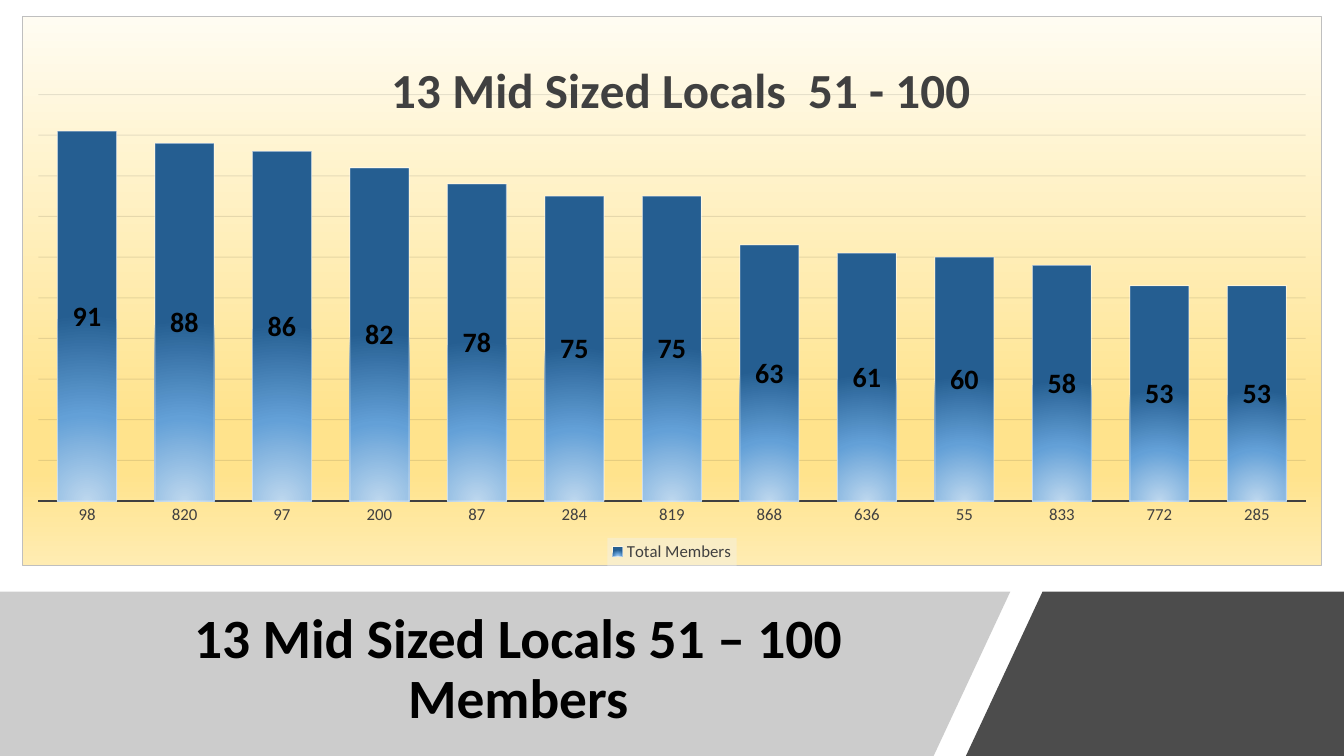
from pptx import Presentation
from pptx.chart.data import CategoryChartData
from pptx.dml.color import RGBColor
from pptx.enum.chart import XL_CHART_TYPE as ChartType, XL_LABEL_POSITION as LabelPosition
from pptx.enum.chart import XL_LEGEND_POSITION as LegendPosition, XL_TICK_MARK as TickMark
from pptx.enum.text import MSO_ANCHOR, PP_ALIGN
from pptx.oxml import parse_xml
from pptx.oxml.ns import nsdecls, qn
from pptx.util import Inches, Pt

TITLE = "13 Mid Sized Locals 51 – 100 Members"
CHART_TITLE = "13 Mid Sized Locals  51 - 100"
SERIES_NAME = "Total Members"
MEMBERS_BY_LOCAL = [
    ("98", 91), ("820", 88), ("97", 86), ("200", 82), ("87", 78), ("284", 75), ("819", 75),
    ("868", 63), ("636", 61), ("55", 60), ("833", 58), ("772", 53), ("285", 53),
]

WIDTH, HEIGHT = 13.33, 7.5
BAND_TOP = 5.87
BAND_PANELS = [
    ([(0, BAND_TOP), (10.02, BAND_TOP), (9.26, HEIGHT), (0, HEIGHT)], RGBColor(0x80, 0x80, 0x80), 40),
    ([(10.34, BAND_TOP), (WIDTH, BAND_TOP), (WIDTH, HEIGHT), (9.58, HEIGHT)], RGBColor(0, 0, 0), 70),
]
TITLE_BOX = (0.92, 6.05, 8.44, 1.2)
CHART_BOX = (0.22, 0.16, 12.89, 5.46)

FONT = "Calibri"
BLACK = RGBColor(0, 0, 0)
WHITE = RGBColor(0xFF, 0xFF, 0xFF)
DARK_GREY = RGBColor(0x40, 0x40, 0x40)
GRID_GREY = RGBColor(0x0D, 0x0D, 0x0D)
BORDER_GREY = RGBColor(0xBF, 0xBF, 0xBF)
LEGEND_GREY = RGBColor(0xF2, 0xF2, 0xF2)
BACKGROUND_STOPS = [
    (0, RGBColor(0xFF, 0xFC, 0xF2)), (74, RGBColor(0xFF, 0xE3, 0x8C)),
    (83, RGBColor(0xFF, 0xE3, 0x8C)), (100, RGBColor(0xFF, 0xEC, 0xB2)),
]
COLUMN_STOPS = [
    (0, RGBColor(0xBD, 0xD7, 0xEE)), (46, RGBColor(0x63, 0xA0, 0xD7)), (100, RGBColor(0x25, 0x5E, 0x91)),
]
LINEAR_DOWN = '<a:lin ang="5400000" scaled="0"/>'
GLOW_FROM_BASE = ('<a:path path="circle"><a:fillToRect l="50000" t="130000" '
                  'r="50000" b="-30000"/></a:path>')

TITLE_FORMAT = {"name": FONT, "size": Pt(39.6), "bold": True}
CHART_TITLE_FORMAT = {"name": FONT, "size": Pt(35), "bold": True}
LABEL_FORMAT = {"name": FONT, "size": Pt(20), "bold": True}
SMALL_FORMAT = {"name": FONT, "size": Pt(12), "bold": False}


def format_font(font, values, color):
    for name, value in values.items():
        setattr(font, name, value)
    font.color.rgb = color


def color_xml(color, opacity=100):
    return f'<a:srgbClr val="{color}"><a:alpha val="{opacity * 1000}"/></a:srgbClr>'


def gradient_xml(stops, direction):
    stops_xml = "".join(f'<a:gs pos="{share * 1000}">{color_xml(color)}</a:gs>' for share, color in stops)
    return f'<a:gradFill rotWithShape="1"><a:gsLst>{stops_xml}</a:gsLst>{direction}</a:gradFill>'


def solid_xml(color, opacity=100):
    return f"<a:solidFill>{color_xml(color, opacity)}</a:solidFill>"


def line_xml(color, opacity=100, points=0.75):
    return f'<a:ln w="{Pt(points)}">{solid_xml(color, opacity)}</a:ln>'


def chart_properties(content):
    return parse_xml(f'<c:spPr {nsdecls("c", "a")}>{content}</c:spPr>')


def place(element, index, target=None, **shares):
    """Give a chart part a manual layout, in shares of the chart's size."""
    for old in element.findall(qn("c:layout")):
        element.remove(old)
    tags = [("layoutTarget", target)] if target else []
    tags += [("xMode", "edge"), ("yMode", "edge"), *shares.items()]
    content = "".join(f'<c:{tag} val="{value}"/>' for tag, value in tags)
    element.insert(index, parse_xml(
        f'<c:layout {nsdecls("c")}><c:manualLayout>{content}</c:manualLayout></c:layout>'))


def add_panel(slide, points, color, opacity):
    corners = [(Inches(x), Inches(y)) for x, y in points]
    builder = slide.shapes.build_freeform(*corners[0])
    builder.add_line_segments(corners[1:], close=True)
    shape = builder.convert_to_shape()
    shape.shadow.inherit = False
    shape.fill.solid()
    shape.fill.fore_color.rgb = color
    color_element = shape.fill._xPr.find(qn("a:solidFill"))[0]
    color_element.append(parse_xml(f'<a:alpha {nsdecls("a")} val="{opacity * 1000}"/>'))
    shape.line.fill.background()


def add_title(slide):
    frame = slide.shapes.add_textbox(*map(Inches, TITLE_BOX)).text_frame
    frame.word_wrap = True
    frame.vertical_anchor = MSO_ANCHOR.MIDDLE
    paragraph = frame.paragraphs[0]
    paragraph.text = TITLE
    paragraph.alignment = PP_ALIGN.CENTER
    paragraph.line_spacing = 0.9
    format_font(paragraph.font, TITLE_FORMAT, BLACK)


def add_members_chart(slide):
    data = CategoryChartData()
    data.categories = [local for local, _ in MEMBERS_BY_LOCAL]
    data.add_series(SERIES_NAME, [members for _, members in MEMBERS_BY_LOCAL])
    chart = slide.shapes.add_chart(ChartType.COLUMN_CLUSTERED, *map(Inches, CHART_BOX), data).chart
    format_font(chart.font, {"name": FONT, "size": Pt(10)}, BLACK)
    chart._chartSpace.find(qn("c:chart")).addnext(
        chart_properties(gradient_xml(BACKGROUND_STOPS, LINEAR_DOWN) + line_xml(BORDER_GREY)))

    chart.has_title = True
    title = chart.chart_title
    title.text_frame.text = CHART_TITLE
    format_font(title.text_frame.paragraphs[0].runs[0].font, CHART_TITLE_FORMAT, DARK_GREY)
    place(title._element, 1, x=0.277, y=0.055)

    chart.has_legend = True
    legend = chart.legend
    legend.position = LegendPosition.BOTTOM
    legend.include_in_layout = False
    format_font(legend.font, SMALL_FORMAT, DARK_GREY)
    legend._element.find(qn("c:txPr")).addprevious(chart_properties(solid_xml(LEGEND_GREY, 39)))

    locals_axis = chart.category_axis
    locals_axis.major_tick_mark = TickMark.NONE
    format_font(locals_axis.tick_labels.font, SMALL_FORMAT, DARK_GREY)
    locals_axis.format.line.color.rgb = DARK_GREY
    locals_axis.format.line.width = Pt(1.5)

    members_axis = chart.value_axis
    members_axis.visible = False
    members_axis.minimum_scale, members_axis.maximum_scale, members_axis.major_unit = 0, 100, 10
    members_axis.has_major_gridlines = True
    gridlines = members_axis._element.find(qn("c:majorGridlines"))
    gridlines.append(chart_properties(line_xml(GRID_GREY, 10)))

    plot = chart.plots[0]
    plot.gap_width = 65
    plot.vary_by_categories = False
    place(chart._chartSpace.chart.plotArea, 0, "inner", x=0.012, y=0.142, w=0.976, h=0.74)
    columns = plot.series[0]
    columns.invert_if_negative = False
    properties = columns._element.get_or_add_spPr()
    for part in chart_properties(gradient_xml(COLUMN_STOPS, GLOW_FROM_BASE) + line_xml(WHITE, 50)):
        properties.append(part)
    labels = columns.data_labels
    labels.show_value = True
    labels.position = LabelPosition.CENTER
    format_font(labels.font, LABEL_FORMAT, BLACK)


def main():
    presentation = Presentation()
    presentation.slide_width, presentation.slide_height = Inches(WIDTH), Inches(HEIGHT)
    slide = presentation.slides.add_slide(presentation.slide_layouts[6])
    for panel in BAND_PANELS:
        add_panel(slide, *panel)
    add_title(slide)
    add_members_chart(slide)
    presentation.save("out.pptx")


if __name__ == "__main__":
    main()
